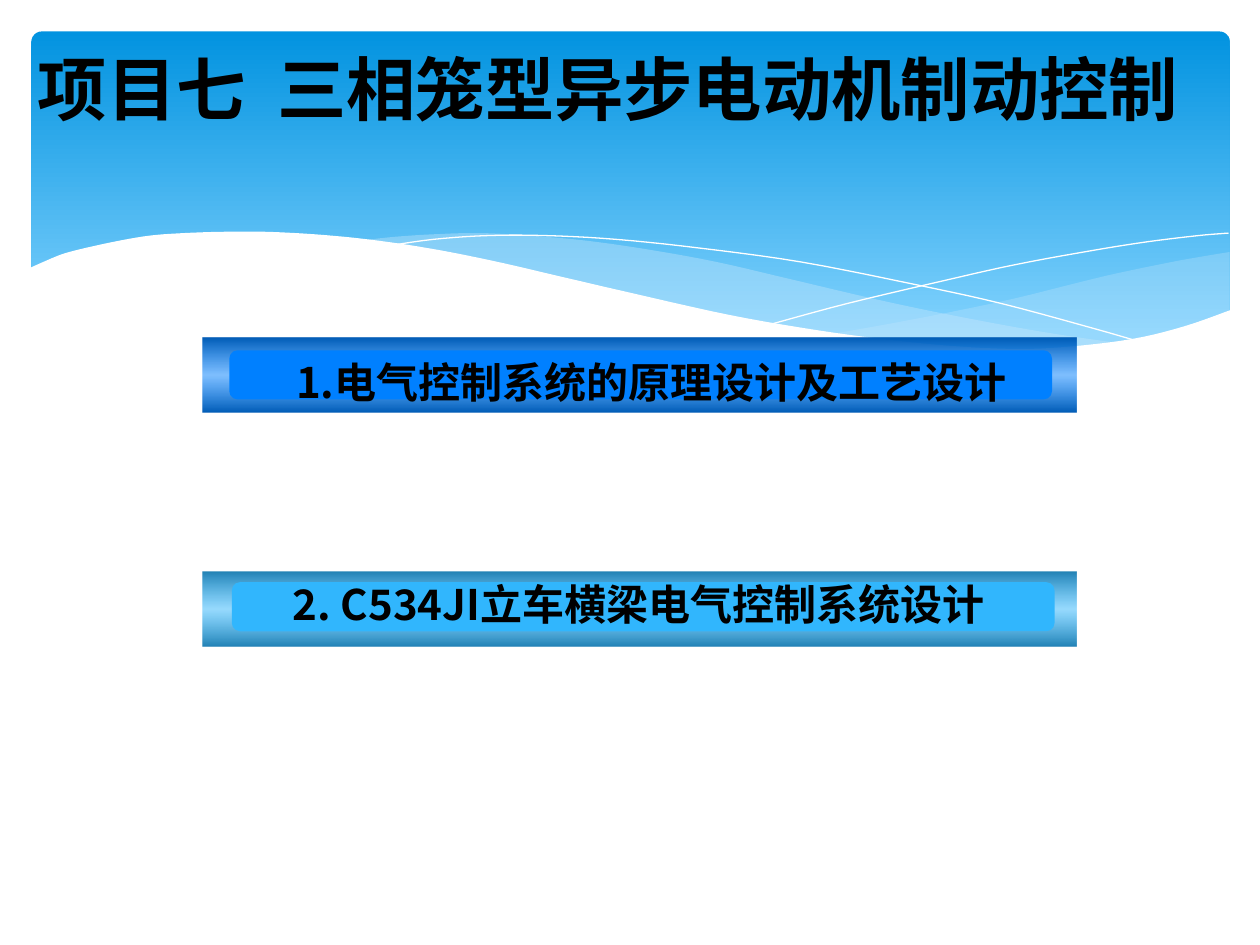
from lxml import etree
from pptx import Presentation
from pptx import util as u
from pptx.dml.color import RGBColor
from pptx.enum import shapes, text
from pptx.oxml.ns import qn

COLORS = {
    "sky_top": "0293E0", "sky_bottom": "83D3FE", "wave": "C6E7FC",
    "white": "FFFFFF", "black": "000000",
    "blue": "0080FF", "blue_edge": "005CB6",
    "cyan": "31B6FD", "cyan_edge": "2382B5",
}
COLUMNS, ROWS = 100, 75
CJK_FONT = "Noto Sans CJK SC"

RIGHT_WAVE_TOP = [(97.6, 20), (93.5, 20.7), (89.1, 21.6), (86.1, 22.3),
                  (80.5, 23.7), (75.3, 24.8), (70.6, 25.7), (66.1, 26.5)]
RIGHT_WAVE_BOTTOM = [(66.1, 26.5), (70.5, 27.1), (74.5, 27.5), (79.2, 27.7),
                     (83.5, 27.7), (87.2, 27.4), (90.5, 26.9), (93.5, 26.2), (97.6, 24.7)]
MIDDLE_WAVE_TOP = [(89.3, 27.3), (83.7, 26.5), (77.5, 25.4), (70.6, 24), (62.9, 22.2),
                   (56.9, 20.8), (51.4, 19.8), (46.5, 19.1), (42, 18.7), (38, 18.5),
                   (34.4, 18.6), (31.3, 18.8), (28.6, 19.1)]
MIDDLE_WAVE_BOTTOM = [(28.6, 19.1), (34.2, 19.9), (40.4, 21.1), (44.9, 22.2), (53, 24),
                      (60.1, 25.5), (66.5, 26.6), (72.2, 27.4), (77.3, 27.7),
                      (81.8, 27.8), (85.7, 27.7), (89.3, 27.3)]
FALLING_LINE = [(30.9, 19.5), (34.4, 19), (38.7, 18.7), (43.3, 18.7), (48.9, 19),
                (55.6, 19.7), (63.6, 20.8), (72.7, 22.6), (79.5, 24.1), (86.9, 26.1), (90.7, 27.2)]
RISING_LINE = [(61.3, 25.7), (67.2, 24.1), (74.8, 22.3), (80.6, 21), (86.6, 19.9),
               (91, 19.2), (95.1, 18.7), (97.5, 18.5)]
GROUND_TOP = [(97.7, 24.6), (94, 25.9), (89.9, 26.9), (85, 27.5), (80.9, 27.7), (76.1, 27.5),
              (70.8, 27), (64.8, 26.2), (57.9, 25), (50.3, 23.3), (44.7, 22), (39.1, 20.7),
              (34, 19.7), (29.2, 19), (25, 18.6), (21.1, 18.4), (17.7, 18.4), (14.6, 18.5),
              (11.9, 18.7), (9.5, 19.1), (7.6, 19.5), (5.9, 19.9), (4.6, 20.3), (2.3, 21.3)]


def curve(points, steps=5):
    padded = [points[0], *points, points[-1]]
    smooth = []
    for a, b, c, d in zip(padded, padded[1:], padded[2:], padded[3:]):
        for step in range(steps):
            t = step / steps
            smooth.append(tuple(
                (2 * q + (r - p) * t + (2 * p - 5 * q + 4 * r - s) * t ** 2
                 + (3 * q - p - 3 * r + s) * t ** 3) / 2
                for p, q, r, s in zip(a, b, c, d)))
    return smooth + [points[-1]]


class SlideBuilder:
    def __init__(self, presentation):
        self.width = presentation.slide_width
        self.height = presentation.slide_height
        self.slide = presentation.slides.add_slide(presentation.slide_layouts[5])

    def point(self, column, row):
        return round(column * self.width / COLUMNS), round(row * self.height / ROWS)

    def box(self, left, top, width, height):
        return *self.point(left, top), *self.point(width, height)

    def color(self, name):
        return RGBColor.from_string(COLORS[name])

    def solid(self, shape, color, opacity=100):
        shape.fill.solid()
        shape.fill.fore_color.rgb = self.color(color)
        if opacity < 100:
            value = shape.element.spPr.find(".//" + qn("a:srgbClr"))
            etree.SubElement(value, qn("a:alpha"), val=str(opacity * 1000))

    def gradient(self, shape, stops):
        shape.fill.gradient()
        shape.fill.gradient_angle = 270
        stop_list = shape.element.spPr.find(".//" + qn("a:gsLst"))
        for stop in list(stop_list):
            stop_list.remove(stop)
        for position, color, opacity in stops:
            stop = etree.SubElement(stop_list, qn("a:gs"), pos=str(position * 1000))
            value = etree.SubElement(stop, qn("a:srgbClr"), val=COLORS[color])
            if opacity < 100:
                etree.SubElement(value, qn("a:alpha"), val=str(opacity * 1000))

    def panel(self, place, fill=None, stops=None, corner=None):
        kind = shapes.MSO_SHAPE.RECTANGLE if corner is None else shapes.MSO_SHAPE.ROUNDED_RECTANGLE
        shape = self.slide.shapes.add_shape(kind, *self.box(*place))
        shape.shadow.inherit = False
        shape.line.fill.background()
        if corner is not None:
            shape.adjustments[0] = corner
        if stops:
            self.gradient(shape, stops)
        else:
            self.solid(shape, fill)

    def outline(self, points, fill=None, opacity=100, line=None):
        corners = [self.point(*point) for point in points]
        builder = self.slide.shapes.build_freeform(*corners[0])
        builder.add_line_segments(corners[1:], close=fill is not None)
        shape = builder.convert_to_shape()
        shape.shadow.inherit = False
        if fill:
            self.solid(shape, fill, opacity)
        else:
            shape.fill.background()
        if line:
            shape.line.color.rgb = self.color(line)
            shape.line.width = u.Pt(0)
        else:
            shape.line.fill.background()

    def add_words(self, paragraph, words, size, font, bold=True):
        run = paragraph.add_run()
        run.text = words
        run.font.size = u.Pt(size)
        run.font.name = font
        run.font.bold = bold
        run.font.color.rgb = self.color("black")
        if font == CJK_FONT:
            latin = run.font._element.find(qn("a:latin"))
            latin.addnext(latin.makeelement(qn("a:ea"), {"typeface": font}))

    def title(self, place, words):
        shape = self.slide.shapes.title
        shape.left, shape.top, shape.width, shape.height = self.box(*place)
        self.slide.shapes.element.append(shape.element)
        frame = shape.text_frame
        frame.auto_size = text.MSO_AUTO_SIZE.NONE
        frame.vertical_anchor = text.MSO_ANCHOR.MIDDLE
        paragraph = frame.paragraphs[0]
        paragraph.alignment = text.PP_ALIGN.LEFT
        self.add_words(paragraph, words, 39.6, "Calibri")

    def label(self, place, runs):
        frame = self.slide.shapes.add_textbox(*self.box(*place)).text_frame
        frame.word_wrap = True
        for words, font, bold in runs:
            self.add_words(frame.paragraphs[0], words, 24, font, bold)

    def topic(self, top, color, inner, label, runs):
        edge = color + "_edge"
        self.panel((16.1, top, 69.3, 5.9),
                   stops=[(0, edge, 100), (50, color, 50), (100, edge, 100)])
        self.panel((*inner, 65.3, 3.9), fill=color, corner=0.17)
        self.label(label, runs)


def main():
    presentation = Presentation()
    presentation.slide_width, presentation.slide_height = u.Inches(10), u.Inches(7.5)
    builder = SlideBuilder(presentation)

    builder.panel((2.5, 2.5, 95.1, 27), corner=0.03,
                  stops=[(0, "sky_top", 100), (90, "sky_bottom", 100)])
    builder.outline(curve(RIGHT_WAVE_TOP) + curve(RIGHT_WAVE_BOTTOM), "wave", 29)
    builder.outline(curve(MIDDLE_WAVE_TOP) + curve(MIDDLE_WAVE_BOTTOM), "wave", 40)
    for line in (FALLING_LINE, RISING_LINE):
        builder.outline(curve(line), line="white")
    builder.outline(curve(GROUND_TOP) + [(2.3, 32.9), (97.7, 32.9)], "white")

    builder.title((2, 3.6, 96.1, 6.7), "项目七  三相笼型异步电动机制动控制")
    builder.topic(45.4, "cyan", (18.4, 46.2), (21.5, 45.4, 60.5, 5),
                  [(" 2. C534JI立车横梁电气控制系统设计", CJK_FONT, True)])
    builder.topic(26.8, "blue", (18.2, 27.8), (21.6, 27.8, 61.5, 9.1),
                  [(" ", "Arial", False), ("1.电气控制系统的原理设计及工艺设计", CJK_FONT, True)])

    presentation.save("out.pptx")


if __name__ == "__main__":
    main()
